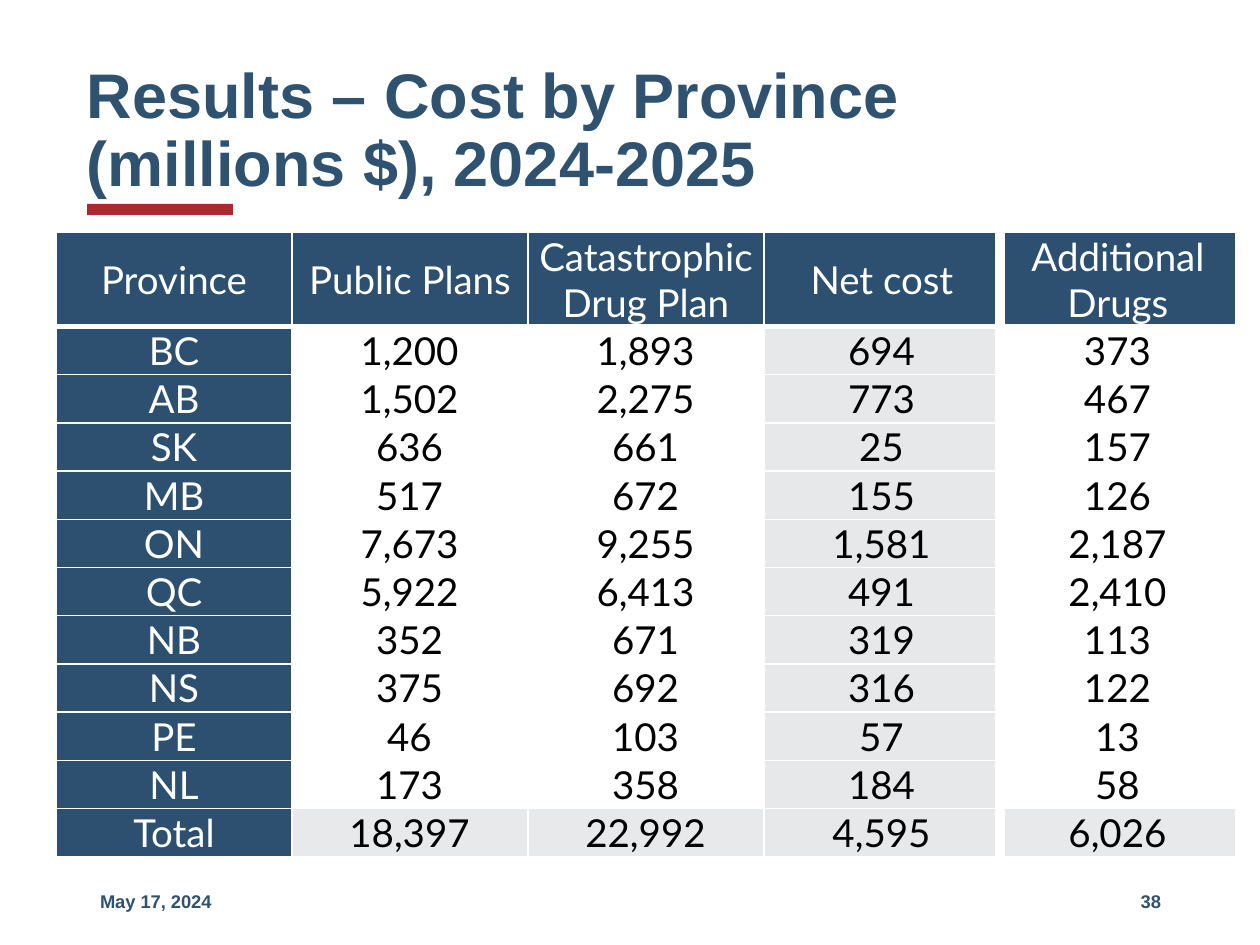
import dataclasses

import lxml.etree
import pptx
import pptx.dml.color
import pptx.enum.shapes
import pptx.enum.text
import pptx.oxml.ns
import pptx.util

RGB = pptx.dml.color.RGBColor
ALIGN = pptx.enum.text.PP_ALIGN
MIDDLE = pptx.enum.text.MSO_ANCHOR.MIDDLE

SCALE = 914400 / 126  # EMU in one px

NAVY = RGB(0x2D, 0x50, 0x71)
BLUE = RGB(0x2F, 0x52, 0x71)
RED = RGB(0xAF, 0x27, 0x2F)
GREY = RGB(0xE7, 0xE8, 0xE9)
PALE = RGB(0xE8, 0xE9, 0xEB)
WHITE = RGB(0xFF, 0xFF, 0xFF)
BLACK = RGB(0x00, 0x00, 0x00)

COL, HEAD, ROW = 236, 93, 48
NET = 3  # column of the net cost
THIN, RULE, GAP = 1, 3, 6  # border widths in points

COSTS = [
    ("Province", "Public Plans", "Catastrophic Drug Plan", "Net cost", "Additional Drugs"),
    ("BC", "1,200", "1,893", "694", "373"),
    ("AB", "1,502", "2,275", "773", "467"),
    ("SK", "636", "661", "25", "157"),
    ("MB", "517", "672", "155", "126"),
    ("ON", "7,673", "9,255", "1,581", "2,187"),
    ("QC", "5,922", "6,413", "491", "2,410"),
    ("NB", "352", "671", "319", "113"),
    ("NS", "375", "692", "316", "122"),
    ("PE", "46", "103", "57", "13"),
    ("NL", "173", "358", "184", "58"),
    ("Total", "18,397", "22,992", "4,595", "6,026"),
]


@dataclasses.dataclass(frozen=True)
class Label:
    lines: tuple[str, ...]
    left: int
    top: int
    width: int
    height: int
    size: float
    inset: int = 13
    align: ALIGN = ALIGN.LEFT
    space: float = 1.0


LABELS = [
    Label(("Results – Cost by Province ", "(millions $), 2024-2025"),
          87, 50, 1086, 164, 36, inset=0, space=0.9),
    Label(("May 17, 2024",), 87, 876, 284, 50, 10.5),
    Label(("38",), 890, 876, 284, 50, 10.5, align=ALIGN.RIGHT),
]


def px(length: int) -> pptx.util.Emu:
    return pptx.util.Emu(round(length * SCALE))


def add_run(para, text: str, face: str, size: float, color: RGB, bold: bool) -> None:
    run = para.add_run()
    run.text = text
    run.font.name = face
    run.font.size = pptx.util.Pt(size)
    run.font.color.rgb = color
    run.font.bold = bold


def add_label(slide, label: Label) -> None:
    box = slide.shapes.add_textbox(
        px(label.left), px(label.top), px(label.width), px(label.height))
    frame = box.text_frame
    frame.word_wrap = True
    frame.vertical_anchor = MIDDLE
    frame.margin_left = frame.margin_right = px(label.inset)
    para = frame.paragraphs[0]
    para.alignment = label.align
    para.line_spacing = label.space
    for index, line in enumerate(label.lines):
        if index:
            para.add_line_break()
        add_run(para, line, "Arial", label.size, BLUE, True)


def add_bar(slide) -> None:
    bar = slide.shapes.add_shape(
        pptx.enum.shapes.MSO_SHAPE.RECTANGLE, px(87), px(204), px(146), px(11))
    bar.shadow.inherit = False
    bar.fill.solid()
    bar.fill.fore_color.rgb = RED
    bar.line.fill.background()


def set_edges(cell, edges: dict[str, int]) -> None:
    """Put white borders, in points, ahead of the cell's fill."""
    props = cell._tc.get_or_add_tcPr()
    for index, (side, width) in enumerate(edges.items()):
        line = lxml.etree.Element(
            pptx.oxml.ns.qn(f"a:ln{side}"), w=str(pptx.util.Pt(width)))
        fill = lxml.etree.SubElement(line, pptx.oxml.ns.qn("a:solidFill"))
        lxml.etree.SubElement(fill, pptx.oxml.ns.qn("a:srgbClr"), val=str(WHITE))
        props.insert(index, line)


def pick_fill(row: int, col: int) -> RGB:
    if row == 0 or col == 0:
        return NAVY
    if col == NET:
        return GREY
    return PALE if row == len(COSTS) - 1 else WHITE


def fill_cell(cell, text: str, row: int, col: int) -> None:
    head = row == 0 or col == 0
    cell.fill.solid()
    cell.fill.fore_color.rgb = pick_fill(row, col)
    cell.vertical_anchor = MIDDLE
    cell.margin_left = cell.margin_top = cell.margin_bottom = px(1)
    cell.margin_right = px(1 if head else 2)
    para = cell.text_frame.paragraphs[0]
    para.alignment = ALIGN.CENTER
    add_run(para, text, "Lato", 22, WHITE if head else BLACK, False)
    set_edges(cell, {
        "L": GAP if col == NET + 1 else THIN,
        "R": GAP if col == NET else THIN,
        "T": RULE if row == 1 else THIN,
        "B": RULE if row == 0 else THIN,
    })


def add_costs(slide) -> None:
    rows, cols = len(COSTS), len(COSTS[0])
    frame = slide.shapes.add_table(
        rows, cols, px(56), px(232), px(COL * cols), px(HEAD + ROW * (rows - 1)))
    table = frame.table
    table.horz_banding = False
    for col in table.columns:
        col.width = px(COL)
    for index, values in enumerate(COSTS):
        table.rows[index].height = px(ROW if index else HEAD)
        for col, text in enumerate(values):
            fill_cell(table.cell(index, col), text, index, col)


def main() -> None:
    deck = pptx.Presentation()
    deck.slide_width, deck.slide_height = px(1260), px(945)
    slide = deck.slides.add_slide(deck.slide_layouts[6])
    add_bar(slide)
    for label in LABELS:
        add_label(slide, label)
    add_costs(slide)
    deck.save("out.pptx")


if __name__ == "__main__":
    main()
